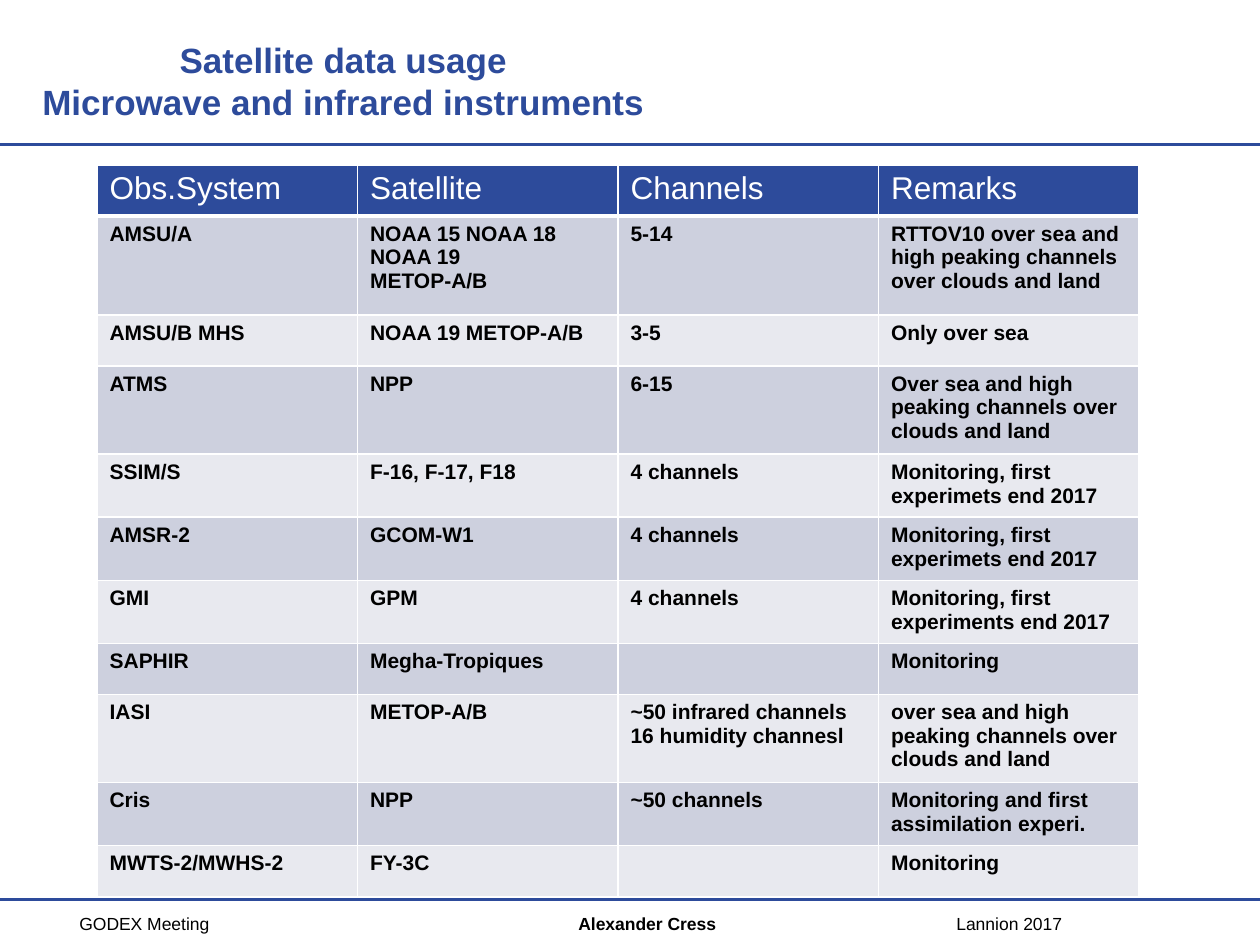
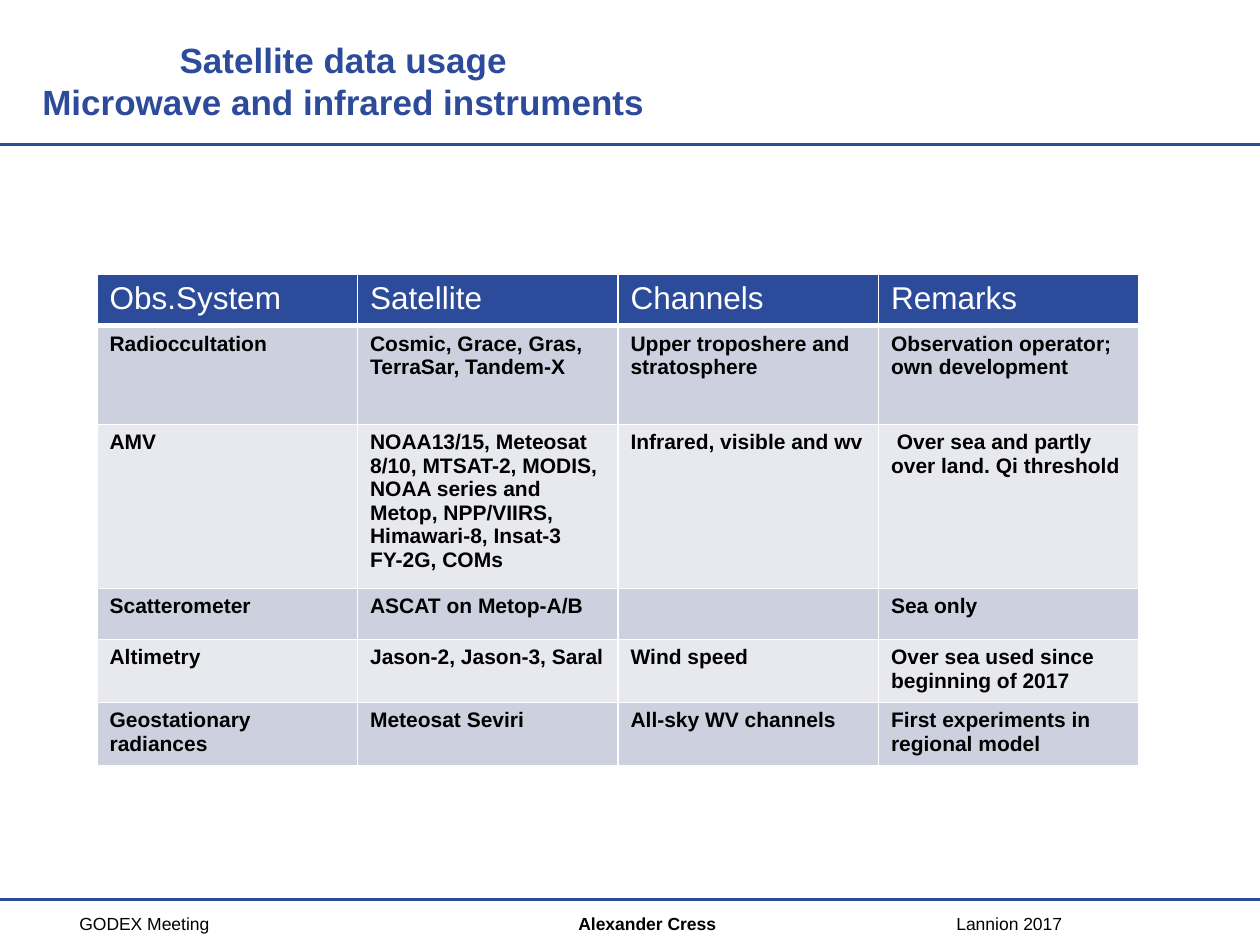
from lxml import etree
from pptx import Presentation
from pptx import util as u
from pptx.dml.color import RGBColor
from pptx.enum import shapes, text
from pptx.oxml import ns

BLUE = RGBColor(0x2D, 0x4B, 0x9B)
WHITE = RGBColor(0xFF, 0xFF, 0xFF)
BLACK = RGBColor(0, 0, 0)
BANDS = (RGBColor(0xCD, 0xD0, 0xDE), RGBColor(0xE8, 0xE9, 0xEF))

GRID_COLUMNS, GRID_ROWS = 40, 30
TABLE_LEFT, TABLE_WIDTH = 3.08, 33.08
ROW_HEIGHT, TALL_ROW_HEIGHT = 1.62, 3.14
FOOTER_TABS = (15.84, 27.84)

TITLE = "Satellite data usage\nMicrowave and infrared instruments"
FOOTER = ("GODEX Meeting\t", "Alexander Cress\t", "Lannion 2017")
HEADINGS = ("Obs.System", "Satellite", "Channels", "Remarks")
LAND_REMARK = "ver sea and high peaking channels over clouds and land"

SOUNDERS = (
    ("AMSU/A", "NOAA 15 NOAA 18 NOAA 19\nMETOP-A/B", "5-14",
     "RTTOV10 over sea and high peaking channels over clouds and land"),
    ("AMSU/B MHS", "NOAA 19 METOP-A/B", "3-5", "Only over sea"),
    ("ATMS", "NPP", "6-15", "O" + LAND_REMARK),
    ("SSIM/S", "F-16, F-17, F18", "4 channels", "Monitoring, first experimets end 2017"),
    ("AMSR-2", "GCOM-W1", "4 channels", "Monitoring, first experimets end 2017"),
    ("GMI", "GPM", "4 channels", "Monitoring, first experiments end 2017"),
    ("SAPHIR", "Megha-Tropiques", "", "Monitoring"),
    ("IASI", "METOP-A/B", "~50 infrared channels\n16 humidity channesl", "o" + LAND_REMARK),
    ("Cris", "NPP", "~50 channels", "Monitoring and first assimilation experi."),
    ("MWTS-2/MWHS-2", "FY-3C", "", "Monitoring"),
)
OTHER_SYSTEMS = (
    ("Radioccultation", "Cosmic, Grace, Gras, TerraSar, Tandem-X",
     "Upper troposhere and stratosphere", "Observation operator; own development"),
    ("AMV",
     "NOAA13/15, Meteosat 8/10, MTSAT-2, MODIS,\n"
     "NOAA series and Metop, NPP/VIIRS, Himawari-8, Insat-3\nFY-2G, COMs",
     "Infrared, visible and wv", " Over sea and partly over land. Qi threshold"),
    ("Scatterometer", "ASCAT on Metop-A/B", "", "Sea only"),
    ("Altimetry", "Jason-2, Jason-3, Saral", "Wind speed",
     "Over sea used since beginning of 2017"),
    ("Geostationary radiances", "Meteosat Seviri", "All-sky WV channels",
     "First experiments in regional model"),
)


class Slides:
    font_name = "Arial"

    def __init__(self):
        self.deck = Presentation()
        self.deck.slide_width = u.Inches(10)
        self.deck.slide_height = u.Inches(7.5)
        self.page = None

    def across(self, columns):
        return round(self.deck.slide_width * columns / GRID_COLUMNS)

    def down(self, rows):
        return round(self.deck.slide_height * rows / GRID_ROWS)

    def place(self, left, top, width, height):
        return self.across(left), self.down(top), self.across(width), self.down(height)

    def style(self, span, size, color, bold=False):
        span.font.name = self.font_name
        span.font.size = u.Pt(size)
        span.font.color.rgb = color
        span.font.bold = bold

    def style_frame(self, frame, size, color, bold=False):
        for para in frame.paragraphs:
            for span in para.runs:
                self.style(span, size, color, bold)

    def rule(self, row):
        line = self.page.shapes.add_connector(
            shapes.MSO_CONNECTOR.STRAIGHT,
            0, self.down(row), self.across(GRID_COLUMNS), self.down(row))
        line.line.color.rgb = BLUE
        line.line.width = u.Pt(1.75)
        properties = line._element.find(ns.qn("p:spPr"))
        etree.SubElement(properties, ns.qn("a:effectLst"))

    def title(self, wording):
        box = self.page.shapes.add_textbox(*self.place(0.88, 1.04, 20.04, 3.08))
        frame = box.text_frame
        frame.word_wrap = False
        frame.auto_size = text.MSO_AUTO_SIZE.SHAPE_TO_FIT_TEXT
        frame.text = wording
        for para in frame.paragraphs:
            para.alignment = text.PP_ALIGN.CENTER
        self.style_frame(frame, 20, BLUE, True)

    def footer(self, parts):
        box = self.page.shapes.add_textbox(*self.place(2.36, 28.8, 33.4, 1))
        frame = box.text_frame
        frame.word_wrap = True
        frame.margin_left = self.across(0.16)
        para = frame.paragraphs[0]
        stops = etree.SubElement(para._p.get_or_add_pPr(), ns.qn("a:tabLst"))
        for stop in FOOTER_TABS:
            etree.SubElement(stops, ns.qn("a:tab"), pos=str(self.across(stop)), algn="l")
        for index, part in enumerate(parts):
            span = para.add_run()
            span.text = part
            self.style(span, 10, BLACK, index == 1)

    def border(self, cell, bottom_width):
        properties = cell._tc.get_or_add_tcPr()
        for side, width in zip("LRTB", (1, 1, 1, bottom_width)):
            edge = etree.SubElement(properties, ns.qn("a:ln" + side), w=str(u.Pt(width)))
            fill = etree.SubElement(edge, ns.qn("a:solidFill"))
            etree.SubElement(fill, ns.qn("a:srgbClr"), val=str(WHITE))

    def table(self, top, records):
        rows = (HEADINGS, *records)
        heights = [TALL_ROW_HEIGHT if index == 1 else ROW_HEIGHT for index in range(len(rows))]
        area = self.place(TABLE_LEFT, top, TABLE_WIDTH, sum(heights))
        table = self.page.shapes.add_table(len(rows), len(HEADINGS), *area).table
        table.first_row = table.horz_banding = False
        for column in table.columns:
            column.width = self.across(TABLE_WIDTH / len(HEADINGS))
        for index, (record, height) in enumerate(zip(rows, heights)):
            table.rows[index].height = self.down(height)
            heading = index == 0
            for cell, wording in zip(table.rows[index].cells, record):
                self.border(cell, 3 if heading else 1)
                cell.fill.solid()
                cell.fill.fore_color.rgb = BLUE if heading else BANDS[(index - 1) % 2]
                cell.text_frame.text = wording
                if heading:
                    self.style_frame(cell.text_frame, 18, WHITE)
                else:
                    self.style_frame(cell.text_frame, 12, BLACK, True)

    def add_page(self, table_top, records):
        self.page = self.deck.slides.add_slide(self.deck.slide_layouts[6])
        self.rule(4.6)
        self.rule(28.56)
        self.footer(FOOTER)
        self.table(table_top, records)
        self.title(TITLE)


def main():
    slides = Slides()
    slides.add_page(5.24, SOUNDERS)
    slides.add_page(8.72, OTHER_SYSTEMS)
    slides.deck.save("out.pptx")


if __name__ == "__main__":
    main()
